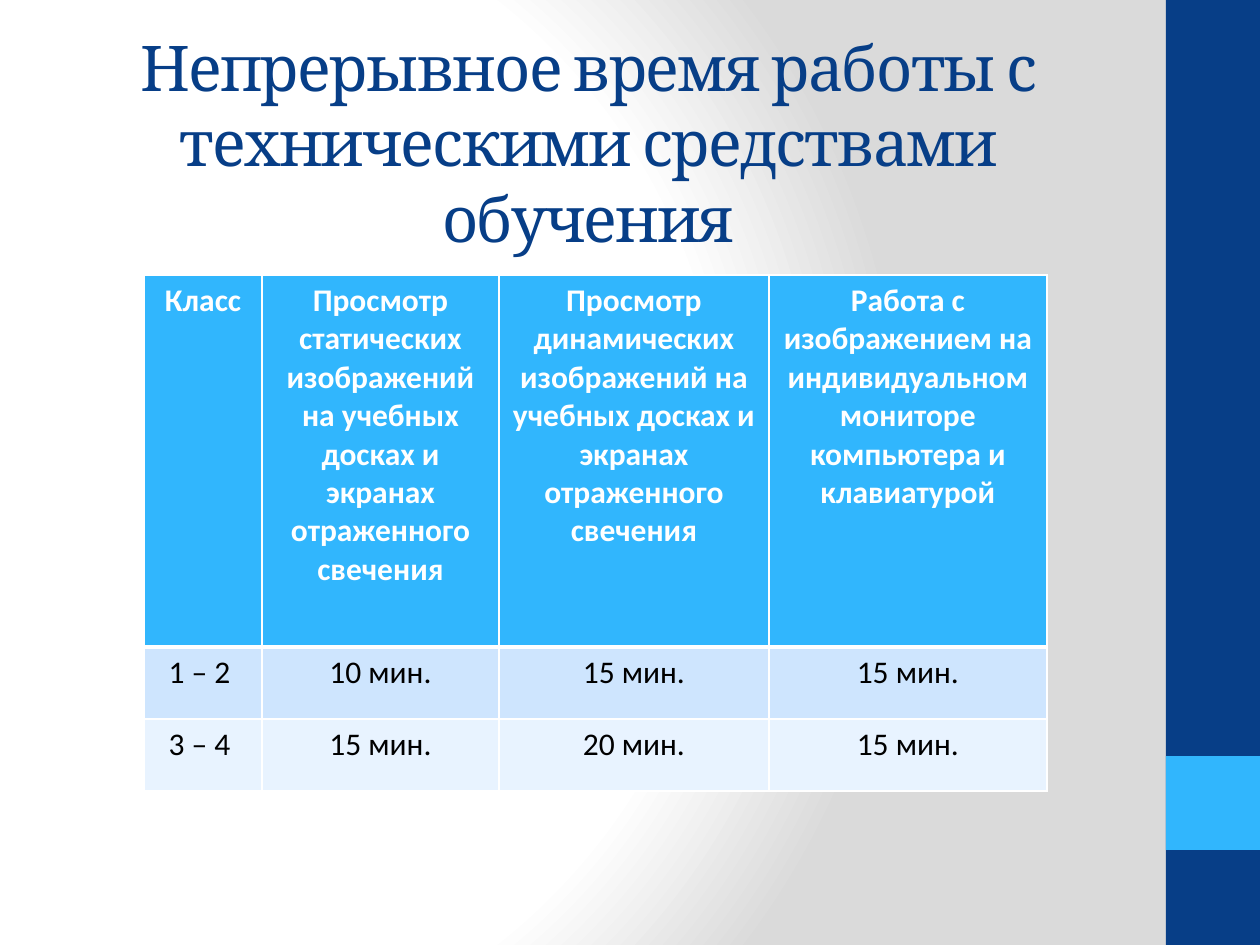
from lxml.etree import SubElement, fromstring
from pptx import Presentation
from pptx.dml.color import RGBColor
from pptx.enum.shapes import MSO_SHAPE
from pptx.enum.text import MSO_ANCHOR, MSO_AUTO_SIZE, PP_ALIGN
from pptx.oxml.ns import qn
from pptx.util import Pt

PX = 914400 / 126
SLIDE_W, SLIDE_H = 1260, 945
BAR_W = 94

COLORS = {
    "navy": "073E87", "sky": "31B6FD", "white": "FFFFFF", "black": "000000",
    "grey": "DADADA", "band_dark": "CEE5FE", "band_light": "E8F3FF",
}

TITLE = "Непрерывное время работы с техническими средствами обучения"
TITLE_BOX = (63, 38, 1050, 207)

TABLE_LEFT, TABLE_TOP = 144, 275
COL_WIDTHS = [118, 237, 270, 278]
ROW_HEIGHTS = [372, 72, 72]
ROW_FILLS = ["sky", "band_dark", "band_light"]
ROWS = [
    ["Класс",
     "Просмотр статических изображений на учебных досках и экранах отраженного свечения",
     "Просмотр динамических изображений на учебных досках и экранах отраженного свечения",
     "Работа с изображением на индивидуальном мониторе компьютера и клавиатурой"],
    ["1 – 2 ", "10 мин.", "15 мин.", "15 мин."],
    ["3 – 4 ", "15 мин.", "20 мин.", "15 мин."],
]


def emu(*px):
    return [round(v * PX) for v in px]


def rgb(name):
    return RGBColor.from_string(COLORS[name])


def write(tf, text, *, font, size, color, bold=False, spacing=None):
    p = tf.paragraphs[0]
    p.alignment = PP_ALIGN.CENTER
    r = p.add_run()
    r.text = text
    r.font.name, r.font.size, r.font.bold = font, Pt(size), bold
    r.font.color.rgb = rgb(color)
    if spacing is not None:
        r.font._element.set("spc", str(spacing * 100))


def set_background(s):
    """Circular gradient, white over three quarters of its range, then grey."""
    fill = s.background.fill
    fill.gradient()
    grad = s.background._cSld.find(".//" + qn("a:gradFill"))
    stops = "".join(
        f'<a:gs pos="{pos * 1000}"><a:srgbClr val="{COLORS[name]}"/></a:gs>'
        for pos, name in [(0, "white"), (75, "white"), (100, "grey")])
    grad.getparent().replace(grad, fromstring(
        '<a:gradFill xmlns:a="http://schemas.openxmlformats.org/drawingml/2006/main" '
        f'rotWithShape="1"><a:gsLst>{stops}</a:gsLst><a:path path="circle">'
        '<a:fillToRect l="20000" t="50000" r="100000" b="50000"/></a:path></a:gradFill>'))


def add_bar(s, color, top, height):
    bar = s.shapes.add_shape(MSO_SHAPE.RECTANGLE, *emu(SLIDE_W - BAR_W, top, BAR_W, height))
    bar.shadow.inherit = False
    bar.fill.solid()
    bar.fill.fore_color.rgb = rgb(color)
    bar.line.fill.background()


def set_borders(cell, bottom):
    tc_pr = cell._tc.get_or_add_tcPr()
    widths = {"lnL": 1, "lnR": 1, "lnT": 1, "lnB": bottom}
    for i, (tag, width) in enumerate(widths.items()):
        ln = tc_pr.makeelement(qn(f"a:{tag}"), {"w": str(Pt(width))})
        solid = SubElement(ln, qn("a:solidFill"))
        SubElement(solid, qn("a:srgbClr"), val=COLORS["white"])
        tc_pr.insert(i, ln)


def add_table(s):
    frame = s.shapes.add_table(
        len(ROWS), len(COL_WIDTHS),
        *emu(TABLE_LEFT, TABLE_TOP, sum(COL_WIDTHS), sum(ROW_HEIGHTS)))
    table = frame.table
    for col, width in zip(table.columns, emu(*COL_WIDTHS)):
        col.width = width
    for row, height in zip(table.rows, emu(*ROW_HEIGHTS)):
        row.height = height
    for i, texts in enumerate(ROWS):
        header = i == 0
        for j, text in enumerate(texts):
            cell = table.cell(i, j)
            cell.fill.solid()
            cell.fill.fore_color.rgb = rgb(ROW_FILLS[i])
            set_borders(cell, bottom=3 if header else 1)
            write(cell.text_frame, text, font="Calibri", size=18, bold=header,
                  color="white" if header else "black")


def main():
    prs = Presentation()
    prs.slide_width, prs.slide_height = emu(SLIDE_W, SLIDE_H)
    s = prs.slides.add_slide(prs.slide_layouts[5])
    set_background(s)
    add_bar(s, "navy", 0, SLIDE_H)
    add_bar(s, "sky", 756, BAR_W)

    title = s.shapes.title
    title.left, title.top, title.width, title.height = emu(*TITLE_BOX)
    tf = title.text_frame
    tf.word_wrap = True
    tf.auto_size = MSO_AUTO_SIZE.NONE
    tf.vertical_anchor = MSO_ANCHOR.MIDDLE
    write(tf, TITLE, font="Cambria", size=36, color="navy", spacing=-1)

    add_table(s)
    prs.save("out.pptx")


if __name__ == "__main__":
    main()
